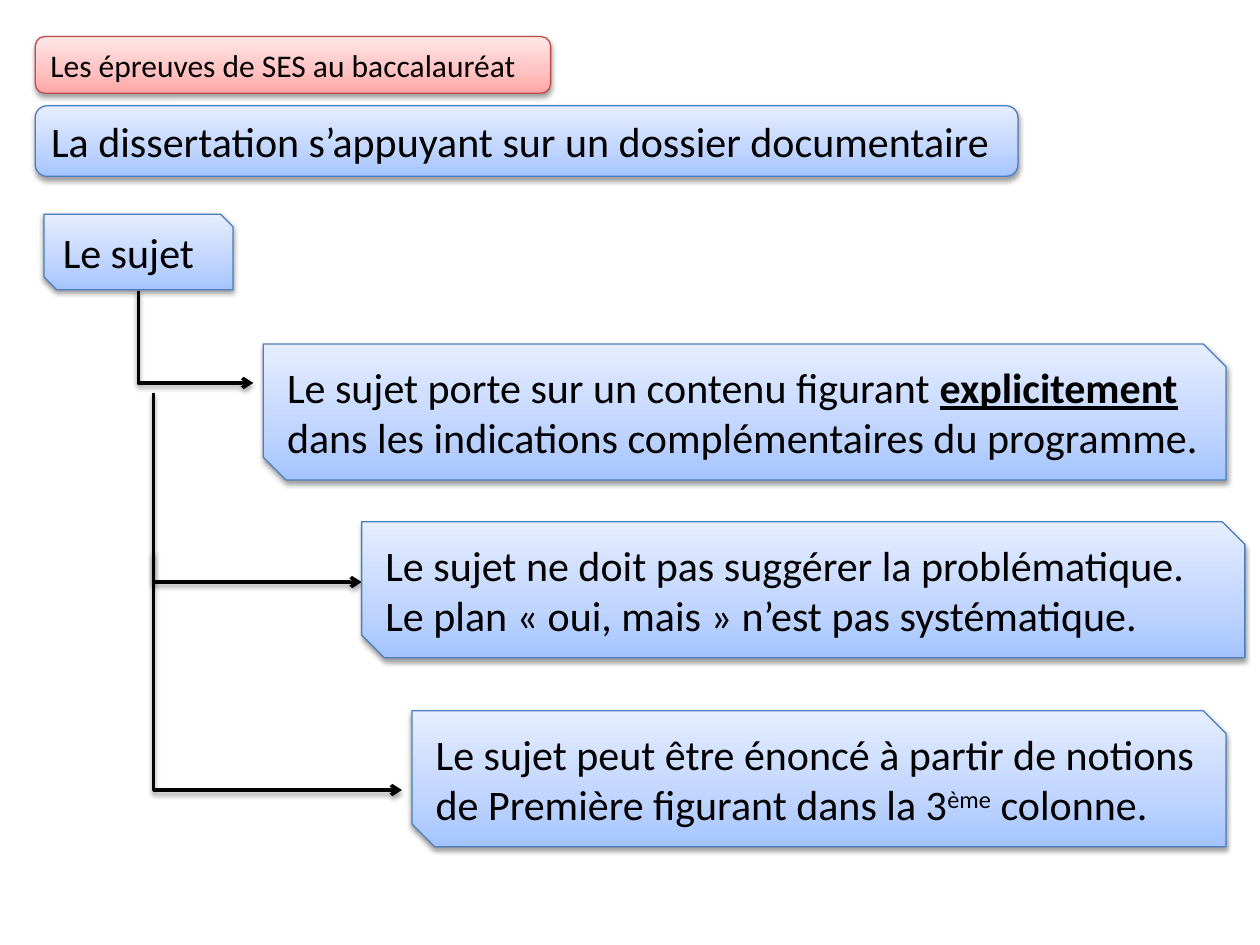
from copy import deepcopy

from lxml.etree import SubElement
from pptx import Presentation
from pptx.dml.color import RGBColor
from pptx.enum.shapes import MSO_CONNECTOR as LINK, MSO_SHAPE as SHAPE
from pptx.enum.text import MSO_ANCHOR, MSO_AUTO_SIZE, PP_ALIGN
from pptx.oxml.ns import qn
from pptx.util import Inches, Pt

BLUE = {"stops": ["A4C4FF", "BFD4FF", "E6EEFF"], "line": "4B7EBC"}
RED = {"stops": ["FFA6A5", "FFC0BF", "FFE7E7"], "line": "BF4C48"}
EMPHASIS = {"bold": True, "underline": True}

HEADINGS = [
    ((0.28, 0.29, 4.09, 0.45), "Les épreuves de SES au baccalauréat", RED, 18),
    ((0.28, 0.84, 7.8, 0.56), "La dissertation s’appuyant sur un dossier documentaire", BLUE, 24),
]
RULES = [
    ((2.09, 2.73, 7.64, 1.08), [
        ("Le sujet porte sur un contenu figurant ", {}, 0),
        ("explicitement", EMPHASIS, 0),
        (" dans les indications complémentaires du programme.", {}, 0),
    ]),
    ((2.87, 4.14, 7.01, 1.08), [
        ("Le sujet ne doit pas suggérer la problématique. "
         "Le plan « oui, mais » n’est pas systématique.", {}, 0),
    ]),
    ((3.27, 5.64, 6.46, 1.08), [
        ("Le sujet peut être énoncé à partir de notions de Première figurant dans la 3", {}, 0),
        ("ème", {}, 30),
        (" colonne.", {}, 0),
    ]),
]
ARROWS = [
    (1.1, 2.31, 2.01, 3.04),
    (1.22, 3.12, 2.87, 4.62),
    (1.22, 4.38, 3.19, 6.27),
]


def color(value):
    return RGBColor.from_string(value)


def add_shadow(item):
    effects = SubElement(item._element.spPr, qn("a:effectLst"))
    outer = SubElement(effects, qn("a:outerShdw"), blurRad=str(Pt(3.1)),
                       dist=str(Pt(1.6)), dir="5400000", rotWithShape="0")
    tint = SubElement(outer, qn("a:srgbClr"), val="000000")
    SubElement(tint, qn("a:alpha"), val="38000")


def fill_gradient(shape, stops):
    shape.fill.gradient()
    shape.fill.gradient_angle = 90
    stop_list = shape._element.spPr.find(".//" + qn("a:gsLst"))
    stop_list.append(deepcopy(stop_list[-1]))
    for stop, position, value in zip(shape.fill.gradient_stops, (0, 0.35, 1), stops):
        stop.position = position
        stop.color.rgb = color(value)


def add_panel(page, kind, box, spans, theme=BLUE, size=24):
    panel = page.shapes.add_shape(kind, *map(Inches, box))
    fill_gradient(panel, theme["stops"])
    panel.line.color.rgb = color(theme["line"])
    panel.line.width = Pt(0.75)
    add_shadow(panel)
    frame = panel.text_frame
    settings = {"word_wrap": True, "vertical_anchor": MSO_ANCHOR.MIDDLE,
                "auto_size": MSO_AUTO_SIZE.SHAPE_TO_FIT_TEXT}
    for name, value in settings.items():
        setattr(frame, name, value)
    para = frame.paragraphs[0]
    para.alignment = PP_ALIGN.LEFT
    for text, extra, raised in spans:
        span = para.add_run()
        span.text = text
        for name, value in {"name": "Calibri", "size": Pt(size), **extra}.items():
            setattr(span.font, name, value)
        span.font.color.rgb = color("000000")
        if raised:
            span.font._element.set("baseline", str(raised * 1000))


def add_elbow_arrow(page, ends):
    arrow = page.shapes.add_connector(LINK.ELBOW, *map(Inches, ends))
    arrow.line.color.rgb = color("000000")
    arrow.line.width = Pt(2)
    SubElement(arrow.line._get_or_add_ln(), qn("a:tailEnd"), type="arrow")
    guides = arrow._element.spPr.find(".//" + qn("a:avLst"))
    SubElement(guides, qn("a:gd"), name="adj1", fmla="val 0")
    add_shadow(arrow)


def add_headings(page):
    for box, text, theme, size in HEADINGS:
        add_panel(page, SHAPE.ROUNDED_RECTANGLE, box, [(text, {}, 0)], theme, size)


def add_subject_tree(page):
    add_panel(page, SHAPE.SNIP_2_DIAG_RECTANGLE, (0.35, 1.7, 1.5, 0.6), [("Le sujet", {}, 0)])
    for ends, (box, spans) in zip(ARROWS, RULES):
        add_elbow_arrow(page, ends)
        add_panel(page, SHAPE.SNIP_2_DIAG_RECTANGLE, box, spans)


def main():
    deck = Presentation()
    deck.slide_width, deck.slide_height = Inches(10), Inches(7.5)
    page = deck.slides.add_slide(deck.slide_layouts[6])
    add_headings(page)
    add_subject_tree(page)
    deck.save("out.pptx")


if __name__ == "__main__":
    main()
